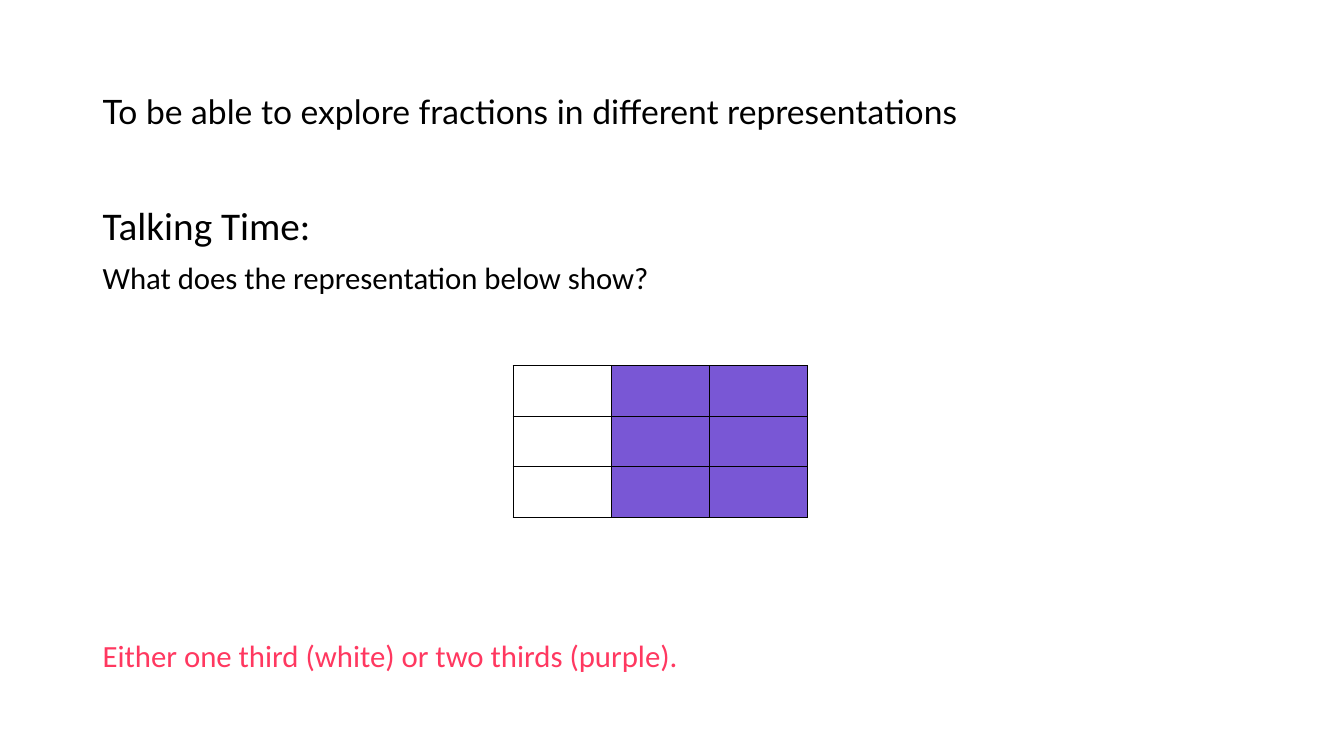
from dataclasses import dataclass

from lxml.etree import SubElement
from pptx import Presentation
from pptx.dml.color import RGBColor as Color
from pptx.enum.shapes import MSO_SHAPE as Shape
from pptx.enum.text import MSO_ANCHOR as Anchor
from pptx.oxml.ns import qn
from pptx.util import Inches, Pt


@dataclass(frozen=True)
class Theme:
    black: str = "000000"
    white: str = "FFFFFF"
    purple: str = "7957D5"
    answer: str = "FF3860"
    title_font: str = "Lato"
    body_font: str = "Calibri"
    title_size: int = 24
    heading_size: int = 28
    body_size: int = 22


theme = Theme()
presentation = Presentation()
presentation.slide_width = Inches(13.33)
presentation.slide_height = Inches(7.5)
slide = presentation.slides.add_slide(presentation.slide_layouts[6])

LEFT = 0.92

# White panel behind the content, 90 % opaque
panel = slide.shapes.add_shape(
    Shape.RECTANGLE, Inches(0.17), Inches(0.15), Inches(13), Inches(7.22))
panel.shadow.inherit = False
panel.fill.solid()
panel.fill.fore_color.rgb = Color.from_string(theme.white)
panel_color = panel._element.spPr.find(qn("a:solidFill")).find(qn("a:srgbClr"))
SubElement(panel_color, qn("a:alpha"), val="90000")
panel.line.color.rgb = Color.from_string(theme.white)
panel.line.width = Pt(1)


def add_text(top, width, height, lines, font_name, anchor=Anchor.TOP):
    """Add a left-aligned box; each line is (text, size, colour)."""
    box = slide.shapes.add_textbox(Inches(LEFT), Inches(top), Inches(width), Inches(height))
    frame = box.text_frame
    frame.word_wrap = True
    frame.vertical_anchor = anchor
    frame.text = "\n".join(text for text, _, _ in lines)
    for index, (paragraph, (_, size, color)) in enumerate(zip(frame.paragraphs, lines)):
        paragraph.line_spacing = 0.9
        paragraph.space_before = Pt(10 if index else 0)
        font = paragraph.runs[0].font
        font.name = font_name
        font.size = Pt(size)
        font.color.rgb = Color.from_string(color)


add_text(0.4, 9.6, 1.45,
         [("To be able to explore fractions in different representations",
           theme.title_size, theme.black)],
         theme.title_font, Anchor.MIDDLE)
add_text(2, 11.5, 1.1,
         [("Talking Time:", theme.heading_size, theme.black),
          ("What does the representation below show?", theme.body_size, theme.black)],
         theme.body_font)
add_text(6.31, 11.5, 0.45,
         [("Either one third (white) or two thirds (purple).", theme.body_size, theme.answer)],
         theme.body_font)

# Fraction grid: one white column, two purple columns
ROWS = 3
column_colors = [theme.white, theme.purple, theme.purple]
table = slide.shapes.add_table(
    ROWS, len(column_colors), Inches(5.09), Inches(3.63), Inches(2.92), Inches(1.5)).table
table.first_row = False
table.horz_banding = False

for row in range(ROWS):
    for column, color in enumerate(column_colors):
        cell = table.cell(row, column)
        properties = cell._tc.get_or_add_tcPr()
        for side in ("a:lnL", "a:lnR", "a:lnT", "a:lnB"):
            border = SubElement(properties, qn(side), w=str(Pt(1)))
            line_fill = SubElement(border, qn("a:solidFill"))
            SubElement(line_fill, qn("a:srgbClr"), val=theme.black)
        cell.fill.solid()
        cell.fill.fore_color.rgb = Color.from_string(color)

presentation.save("out.pptx")
